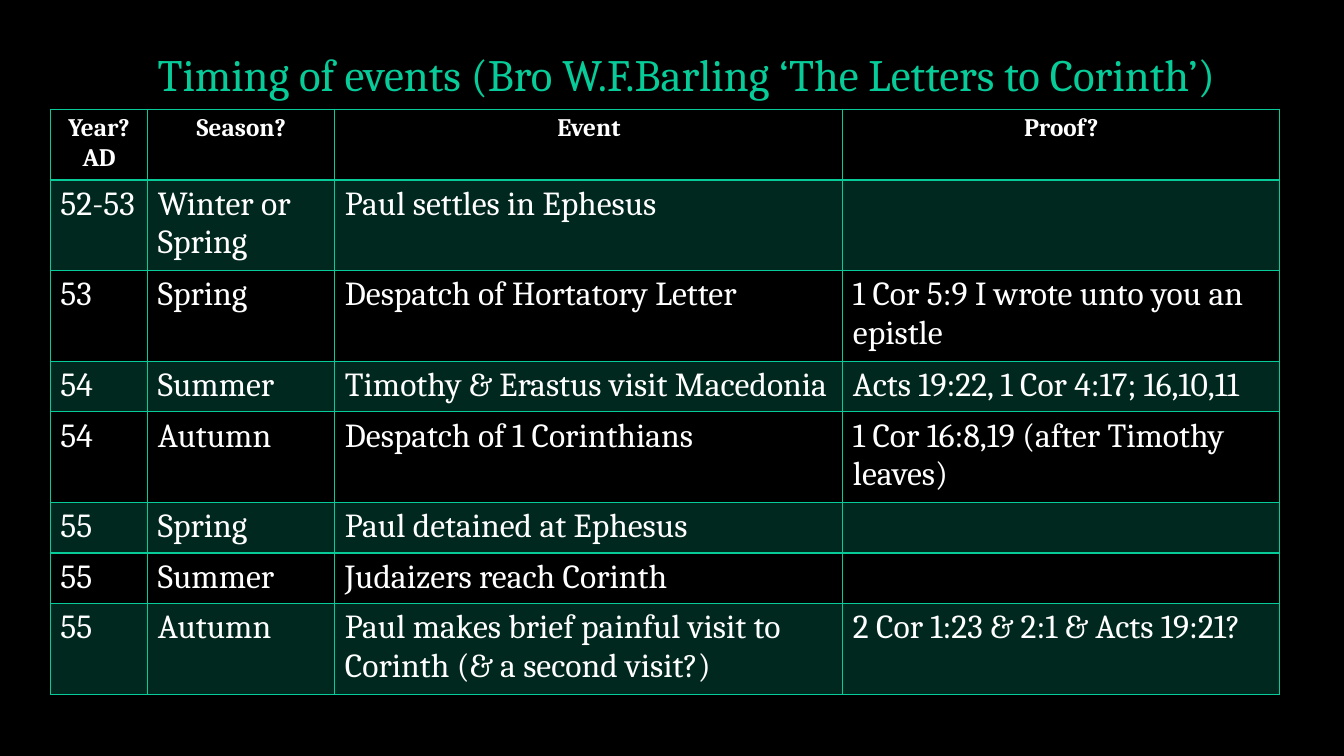
from lxml.etree import SubElement
from pptx import Presentation
from pptx.dml.color import RGBColor
from pptx.enum.text import MSO_ANCHOR, PP_ALIGN
from pptx.oxml import parse_xml
from pptx.oxml.ns import nsdecls, qn
from pptx.util import Pt

COLOURS = {"background": "000000", "accent": "07CB98", "text": "FFFFFF"}
FONT = "Cambria"
BAND_OPACITY = 20  # percent

COLUMN_WIDTHS = [69.6, 133.6, 362.9, 312.1]
ROW_HEIGHTS = [49, 62, 62, 35, 62, 35, 35, 62]
EVENTS = [
    ("Year? AD", "Season?", "Event", "Proof?"),
    ("52-53", "Winter or Spring", "Paul settles in Ephesus", ""),
    ("53", "Spring", "Despatch of Hortatory Letter",
     "1 Cor 5:9 I wrote unto you an epistle"),
    ("54", "Summer", "Timothy & Erastus visit Macedonia",
     "Acts 19:22, 1 Cor 4:17; 16,10,11"),
    ("54", "Autumn", "Despatch of 1 Corinthians",
     "1 Cor 16:8,19 (after Timothy leaves)"),
    ("55", "Spring", "Paul detained at Ephesus", ""),
    ("55", "Summer", "Judaizers reach Corinth", ""),
    ("55", "Autumn",
     "Paul makes brief painful visit to Corinth (& a second visit?)",
     "2 Cor 1:23 & 2:1 & Acts 19:21?"),
]


def colour(name):
    return RGBColor.from_string(COLOURS[name])


def style_paragraph(para, size, colour_name, align, bold=False):
    para.alignment = align
    para.font.name = FONT
    para.font.size = Pt(size)
    para.font.bold = bold
    para.font.color.rgb = colour(colour_name)


def add_title(page, text):
    box = page.shapes.add_textbox(Pt(44), Pt(24), Pt(893), Pt(52))
    frame = box.text_frame
    frame.word_wrap = True
    frame.vertical_anchor = MSO_ANCHOR.BOTTOM
    para = frame.paragraphs[0]
    para.text = text
    para.line_spacing = 0.9
    style_paragraph(para, 32, "accent", PP_ALIGN.CENTER)


def fill_cell(cell, banded):
    if not banded:
        cell.fill.background()
        return
    cell.fill.solid()
    cell.fill.fore_color.rgb = colour("accent")
    tint = cell._tc.tcPr.find(".//" + qn("a:srgbClr"))
    SubElement(tint, qn("a:alpha"), val=str(BAND_OPACITY * 1000))


def border_cell(cell, widths):
    """Draw left, right, top and bottom lines, which precede the fill."""
    for index, (side, width) in enumerate(zip("LRTB", widths)):
        cell._tc.get_or_add_tcPr().insert(index, parse_xml(
            f'<a:ln{side} {nsdecls("a")} w="{Pt(width)}"><a:solidFill>'
            f'<a:srgbClr val="{COLOURS["accent"]}"/></a:solidFill></a:ln{side}>'))


def add_events_table(page):
    table = page.shapes.add_table(
        len(EVENTS), len(COLUMN_WIDTHS), Pt(36), Pt(78),
        Pt(sum(COLUMN_WIDTHS)), Pt(sum(ROW_HEIGHTS))).table
    table.first_row = True
    table.horz_banding = False
    for column, width in zip(table.columns, COLUMN_WIDTHS):
        column.width = Pt(width)
    for row, height in zip(table.rows, ROW_HEIGHTS):
        row.height = Pt(height)

    for row_index, event in enumerate(EVENTS):
        header = row_index == 0
        top = 2 if row_index == 1 else 1
        bottom = 2 if header else 1
        for column_index, text in enumerate(event):
            cell = table.cell(row_index, column_index)
            para = cell.text_frame.paragraphs[0]
            para.text = text
            style_paragraph(para, 18 if header else 24, "text",
                            PP_ALIGN.CENTER if header else PP_ALIGN.LEFT, header)
            fill_cell(cell, banded=row_index % 2 == 1)
            border_cell(cell, (1, 1, top, bottom))


def main():
    deck = Presentation()
    deck.slide_width, deck.slide_height = Pt(960), Pt(540)
    page = deck.slides.add_slide(deck.slide_layouts[6])
    page.background.fill.solid()
    page.background.fill.fore_color.rgb = colour("background")

    add_title(page, "Timing of events (Bro W.F.Barling ‘The Letters to Corinth’)")
    add_events_table(page)
    deck.save("out.pptx")


if __name__ == "__main__":
    main()
